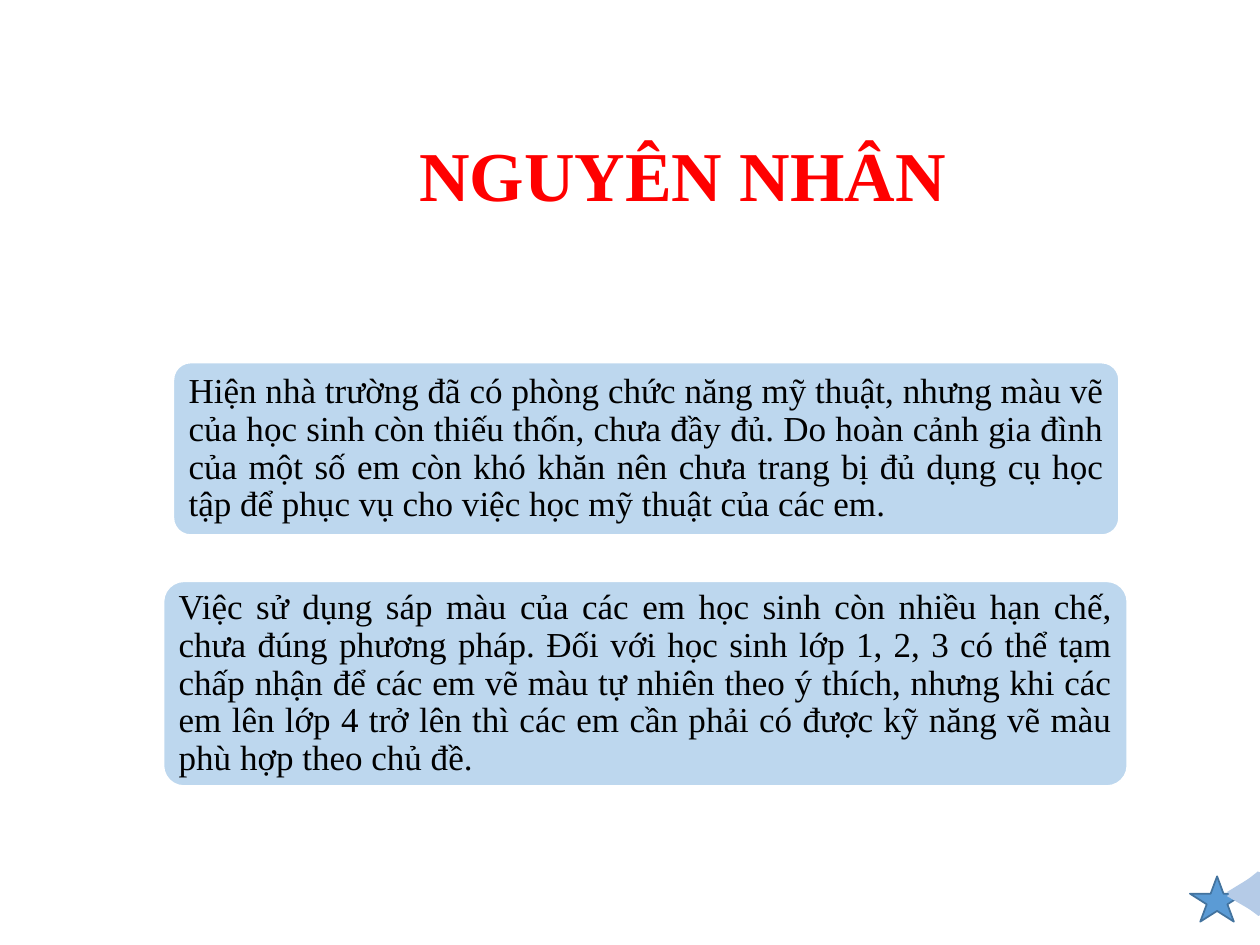
from dataclasses import dataclass

from pptx import Presentation
from pptx.dml.color import RGBColor
from pptx.enum.shapes import MSO_SHAPE
from pptx.enum.text import MSO_ANCHOR, PP_ALIGN
from pptx.shapes.autoshape import Shape
from pptx.slide import Slide
from pptx.util import Pt

STAR = MSO_SHAPE.STAR_5_POINT
ROUND = MSO_SHAPE.ROUNDED_RECTANGLE
ARROW = MSO_SHAPE.LEFT_RIGHT_ARROW
MIDDLE = MSO_ANCHOR.MIDDLE
CENTER = PP_ALIGN.CENTER
JUSTIFY = PP_ALIGN.JUSTIFY
FACE = "Times New Roman"
INSET = 3
PAD = 5.7


@dataclass
class Box:
    left: float
    top: float
    width: float
    height: float

    def shrink(self, gap: float) -> "Box":
        return Box(self.left + gap, self.top + gap,
                   self.width - 2 * gap, self.height - 2 * gap)

    def points(self) -> tuple[Pt, Pt, Pt, Pt]:
        return Pt(self.left), Pt(self.top), Pt(self.width), Pt(self.height)


@dataclass
class Card:
    box: Box
    text: str


CARDS = [
    Card(Box(99.1, 207.2, 540.4, 98.6),
         "Hiện nhà trường đã có phòng chức năng mỹ thuật, nhưng màu vẽ của "
         "học sinh còn thiếu thốn, chưa đầy đủ. Do hoàn cảnh gia đình của một "
         "số em còn khó khăn nên chưa trang bị đủ dụng cụ học tập để phục vụ "
         "cho việc học mỹ thuật của các em."),
    Card(Box(93.4, 332.2, 550.8, 117),
         "Việc sử dụng sáp màu của các em học sinh còn nhiều hạn chế, chưa "
         "đúng phương pháp. Đối với học sinh lớp 1, 2, 3 có thể tạm chấp nhận "
         "để các em vẽ màu tự nhiên theo ý thích, nhưng khi các em lên lớp 4 "
         "trở lên thì các em cần phải có được kỹ năng vẽ màu phù hợp theo "
         "chủ đề."),
]
TURNS = [92.9, 265.8]


def tint(code: str) -> RGBColor:
    return RGBColor.from_string(code)


def add_form(slide: Slide, kind: MSO_SHAPE, box: Box, fill: str,
             line: str | None = None) -> Shape:
    form = slide.shapes.add_shape(kind, *box.points())
    form.shadow.inherit = False
    form.fill.solid()
    form.fill.fore_color.rgb = tint(fill)
    if line:
        form.line.color.rgb = tint(line)
        form.line.width = Pt(1)
    else:
        form.line.fill.background()
    return form


def add_text(slide: Slide, box: Box, text: str, size: float, color: str,
             align: PP_ALIGN, bold: bool = False) -> Shape:
    area = slide.shapes.add_textbox(*box.points())
    area.text_frame.word_wrap = True
    para = area.text_frame.paragraphs[0]
    para.text = text
    para.alignment = align
    para.font.name = FACE
    para.font.size = Pt(size)
    para.font.bold = bold
    para.font.color.rgb = tint(color)
    return area


def add_card(slide: Slide, card: Card) -> None:
    panel = add_form(slide, ROUND, card.box, "BDD7EE", "FFFFFF")
    panel.adjustments[0] = 0.1
    area = add_text(slide, card.box.shrink(INSET), card.text, 20, "000000",
                    JUSTIFY)
    frame = area.text_frame
    frame.vertical_anchor = MIDDLE
    frame.margin_left = frame.margin_right = Pt(PAD)
    frame.margin_top = frame.margin_bottom = Pt(PAD)
    para = frame.paragraphs[0]
    para.line_spacing = 0.9
    para.space_after = Pt(7)


def add_arrow(slide: Slide, turn: float) -> None:
    arrow = add_form(slide, ARROW, Box(707, 492, 25.5, 37.4), "B5CBE7")
    arrow.adjustments[0] = 0.6
    arrow.adjustments[1] = 0.5
    arrow.rotation = turn


def main() -> None:
    deck = Presentation()
    deck.slide_width, deck.slide_height = Pt(720), Pt(540)
    slide = deck.slides.add_slide(deck.slide_layouts[6])
    add_text(slide, Box(37.3, 71.8, 705.6, 55.4), "NGUYÊN NHÂN", 40, "FF0000",
             CENTER, bold=True)
    add_form(slide, STAR, Box(680, 500.8, 31, 25.9), "5B9BD5", "43739E")
    for card, turn in zip(CARDS, TURNS):
        add_card(slide, card)
        add_arrow(slide, turn)
    deck.save("out.pptx")


if __name__ == "__main__":
    main()
